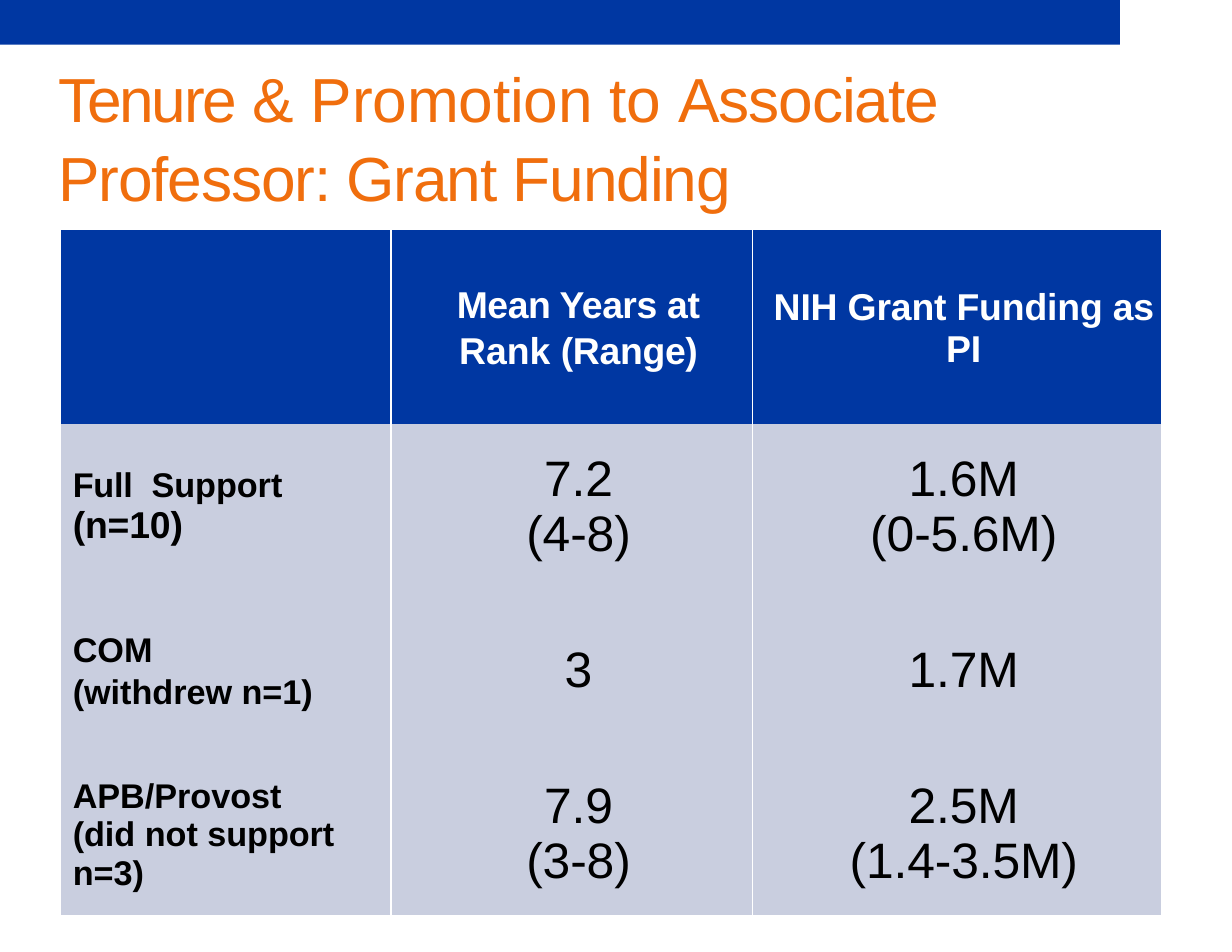
"""Build the tenure and promotion grant funding slide."""
from lxml.etree import SubElement
from pptx import Presentation
from pptx.dml.color import RGBColor
from pptx.enum.shapes import MSO_SHAPE as SHAPE
from pptx.enum.text import MSO_ANCHOR as ANCHOR, PP_ALIGN as ALIGN
from pptx.oxml.ns import qn
from pptx.util import Inches, Pt

COLORS = {"blue": "0037A2", "orange": "F06E0D", "gray": "C9CEDF",
          "white": "FFFFFF", "black": "000000"}
FONT = "Arial"
WIDTH, HEIGHT = 11, 8.5
COLS = [2.95, 3.23, 3.65]
ROWS = [1.74, 1.46, 1.46, 1.46]

TITLE = [[("Tenure ", -1.4), ("& Promotion to ", -0.1),
          ("Associate Professor: Grant Funding", -0.7)]]
HEADER = [
    [],
    [[("Mean Years ", -0.3), ("at", -0.1)], [("Rank ", 0), ("(Range)", -0.2)]],
    [[("NIH Grant Funding as PI", -0.1)]],
]
LABELS = [
    ([[("Full  ", -0.1), ("Support ", 0), ("(n=10)", -0.1, 24)]], 0.9),
    ([[("COM", 0)], [("(withdrew n=1)", 0)]], 2.6),
    ([[("APB/Provost\v(did not support n=3)", 0)]], 2.4),
]
VALUES = [
    [["7.2", "(4-8)"], ["1.6M", "(0-5.6M)"]],
    [["3"], ["1.7M"]],
    [["7.9", "(3-8)"], ["2.5M", "(1.4-3.5M)"]],
]


def rgb(name):
    return RGBColor.from_string(COLORS[name])


def write(tf, paragraphs, size=32, color="black", bold=False, align=ALIGN.LEFT,
          indent=0.0, before=0.0, line=None):
    tf.word_wrap = True
    for i, runs in enumerate(paragraphs):
        p = tf.paragraphs[0] if i == 0 else tf.add_paragraph()
        p.alignment, p.space_before, p.line_spacing = align, Pt(before), line
        p._p.get_or_add_pPr().set("marL", str(Inches(indent)))
        for text, spacing, *own_size in runs:
            for j, part in enumerate(text.split("\v")):
                if j:
                    p.add_line_break()
                r = p.add_run()
                r.text = part
                r.font.name, r.font.bold = FONT, bold
                r.font.size = Pt(own_size[0] if own_size else size)
                r.font.color.rgb = rgb(color)
                r._r.get_or_add_rPr().set("spc", str(round(spacing * 100)))


def style_cell(cell, fill, top):
    cell.margin_left = cell.margin_right = cell.margin_bottom = 0
    cell.margin_top = Inches(top)
    cell.vertical_anchor = ANCHOR.MIDDLE
    tc_pr = cell._tc.get_or_add_tcPr()
    for side in "LRTB":
        ln = SubElement(tc_pr, qn(f"a:ln{side}"), w=str(Pt(1)))
        if side in "LR":
            solid = SubElement(ln, qn("a:solidFill"))
            SubElement(solid, qn("a:srgbClr"), val=COLORS["white"])
        else:
            SubElement(ln, qn("a:noFill"))
    cell.fill.solid()
    cell.fill.fore_color.rgb = rgb(fill)


def add_banner(s):
    sp = s.shapes.add_shape(SHAPE.RECTANGLE, 0, 0, Inches(10), Inches(0.4))
    sp.shadow.inherit = False
    sp.fill.solid()
    sp.fill.fore_color.rgb = rgb("blue")
    sp.line.fill.background()


def add_title(s):
    sp = s.shapes.add_textbox(Inches(0.51), Inches(0.5), Inches(9.91), Inches(1.36))
    tf = sp.text_frame
    tf.margin_left = tf.margin_right = tf.margin_bottom = 0
    tf.margin_top = Inches(0.01)
    write(tf, TITLE, size=40, color="orange", indent=0.01, before=0.9, line=1.05)


def add_funding_table(s):
    table = s.shapes.add_table(len(ROWS), len(COLS), Inches(0.54), Inches(2.05),
                               Inches(sum(COLS)), Inches(sum(ROWS))).table
    for column, width in zip(table.columns, COLS):
        column.width = Inches(width)
    for row, height in zip(table.rows, ROWS):
        row.height = Inches(height)
    for c, paragraphs in enumerate(HEADER):
        cell = table.cell(0, c)
        style_cell(cell, "blue", 0.03)
        write(cell.text_frame, paragraphs, size=24, color="white", bold=True,
              align=ALIGN.CENTER, indent=0.12, before=2.4)
    for r, ((label, before), values) in enumerate(zip(LABELS, VALUES), start=1):
        cell = table.cell(r, 0)
        style_cell(cell, "gray", 0.01 if r == 1 else 0.03)
        write(cell.text_frame, label, size=22, bold=True, indent=0.11, before=before)
        for c, lines in enumerate(values, start=1):
            cell = table.cell(r, c)
            style_cell(cell, "gray", 0.01)
            write(cell.text_frame, [[(text, -0.1)] for text in lines],
                  align=ALIGN.CENTER, indent=0.12)


def main():
    prs = Presentation()
    prs.slide_width, prs.slide_height = Inches(WIDTH), Inches(HEIGHT)
    s = prs.slides.add_slide(prs.slide_layouts[6])
    add_banner(s)
    add_title(s)
    add_funding_table(s)
    prs.save("out.pptx")


if __name__ == "__main__":
    main()
